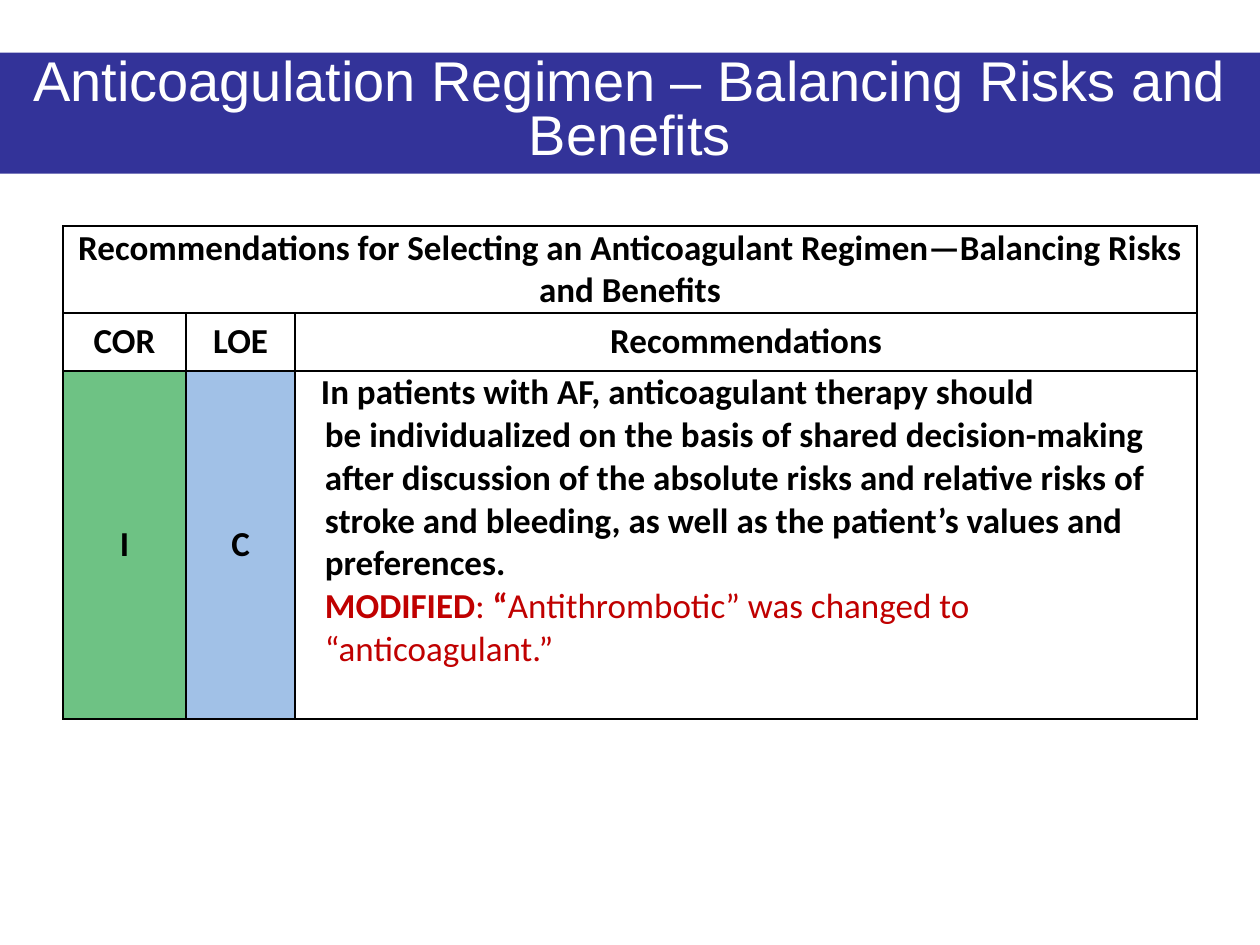
from dataclasses import dataclass

import pptx
import pptx.dml.color
import pptx.enum.text
import pptx.oxml
import pptx.oxml.ns
import pptx.util
from pptx.util import Cm

RGB = pptx.dml.color.RGBColor.from_string
ALIGN = pptx.enum.text.PP_ALIGN
ANCHOR = pptx.enum.text.MSO_ANCHOR
NO_BREAK_SPACE = chr(160)


@dataclass(frozen=True)
class Theme:
    band: str = "333399"
    title: str = "FFFFFF"
    ink: str = "000000"
    change: str = "C00000"
    paper: str = "FFFFFF"
    cor: str = "6EC284"
    loe: str = "A1C1E7"
    title_font: str = "Arial"
    table_font: str = "Calibri"
    title_pt: float = 32
    table_pt: float = 20
    border_pt: float = 1


@dataclass(frozen=True)
class Run:
    text: str
    bold: bool = True
    color: str = Theme.ink


@dataclass(frozen=True)
class Paragraph:
    runs: tuple[Run, ...]
    align: ALIGN = ALIGN.LEFT
    left: float = 0.55
    indent: float = 0


@dataclass(frozen=True)
class Entry:
    row: int
    col: int
    paragraphs: tuple[Paragraph, ...]
    fill: str = Theme.paper
    anchor: ANCHOR = ANCHOR.MIDDLE


THEME = Theme()
COLUMNS = (2.48, 2.2, 18.18)
ROWS = (1.75, 1.17, 7.01)


def label(row: int, col: int, text: str, fill: str = THEME.paper) -> Entry:
    return Entry(row, col, (Paragraph((Run(text),), ALIGN.CENTER, 0),), fill)


ENTRIES = (
    label(0, 0, "Recommendations for Selecting an Anticoagulant Regimen—Balancing Risks and Benefits"),
    label(1, 0, "COR"),
    label(1, 1, "LOE"),
    label(1, 2, "Recommendations"),
    label(2, 0, "I", THEME.cor),
    label(2, 1, "C", THEME.loe),
    Entry(2, 2, (
        Paragraph((Run(
            f"In patients with AF, anticoagulant therapy should be{NO_BREAK_SPACE}individualized "
            "on the basis of shared decision-making after discussion of the absolute risks and "
            "relative risks of stroke and bleeding, as well as the patient’s values and "
            "preferences."),), indent=-0.08),
        Paragraph((
            Run("MODIFIED", True, THEME.change),
            Run(":", False, THEME.change),
            Run(" “", True, THEME.change),
            Run("Antithrombotic” was changed to “anticoagulant.”", False, THEME.change))),
    ), anchor=ANCHOR.TOP),
)


def style_font(font: pptx.text.text.Font, name: str, size: float, color: str, bold: bool) -> None:
    font.name, font.size, font.bold = name, pptx.util.Pt(size), bold
    font.color.rgb = RGB(color)


def add_title(s: pptx.slide.Slide, text: str) -> None:
    sp = s.shapes.title
    sp.left, sp.top, sp.width, sp.height = Cm(0), Cm(1.06), Cm(25.4), Cm(2.44)
    sp.fill.solid()
    sp.fill.fore_color.rgb = RGB(THEME.band)
    tf = sp.text_frame
    tf.text = text
    tf.word_wrap = True
    tf.auto_size = pptx.enum.text.MSO_AUTO_SIZE.NONE
    tf.vertical_anchor = ANCHOR.TOP
    p = tf.paragraphs[0]
    p.alignment, p.line_spacing = ALIGN.CENTER, 0.8
    style_font(p.runs[0].font, THEME.title_font, THEME.title_pt, THEME.title, False)


def set_borders(cell: pptx.table._Cell) -> None:
    """Border all four sides; lines must precede the fill in the cell properties."""
    tc_pr = cell._tc.get_or_add_tcPr()
    for i, side in enumerate(("lnL", "lnR", "lnT", "lnB")):
        tc_pr.insert(i, pptx.oxml.parse_xml(
            f'<a:{side} {pptx.oxml.ns.nsdecls("a")} w="{pptx.util.Pt(THEME.border_pt)}">'
            f'<a:solidFill><a:srgbClr val="{THEME.ink}"/></a:solidFill></a:{side}>'))


def fill_cell(cell: pptx.table._Cell, entry: Entry) -> None:
    cell.fill.solid()
    cell.fill.fore_color.rgb = RGB(entry.fill)
    cell.vertical_anchor = entry.anchor
    tf = cell.text_frame
    for i, paragraph in enumerate(entry.paragraphs):
        p = tf.add_paragraph() if i else tf.paragraphs[0]
        p.alignment = paragraph.align
        p_pr = p._p.get_or_add_pPr()
        p_pr.set("marL", str(Cm(paragraph.left)))
        p_pr.set("indent", str(Cm(paragraph.indent)))
        for run in paragraph.runs:
            r = p.add_run()
            r.text = run.text
            style_font(r.font, THEME.table_font, THEME.table_pt, run.color, run.bold)


def add_recommendations(s: pptx.slide.Slide) -> None:
    table = s.shapes.add_table(len(ROWS), len(COLUMNS), Cm(1.27), Cm(4.56),
                               Cm(sum(COLUMNS)), Cm(sum(ROWS))).table
    for column, width in zip(table.columns, COLUMNS):
        column.width = Cm(width)
    for row, height in zip(table.rows, ROWS):
        row.height = Cm(height)
    table.cell(0, 0).merge(table.cell(0, len(COLUMNS) - 1))
    for cell in table.iter_cells():
        cell.margin_left = cell.margin_right = Cm(0.05)
        cell.margin_top = cell.margin_bottom = Cm(0)
        set_borders(cell)
    for entry in ENTRIES:
        fill_cell(table.cell(entry.row, entry.col), entry)


def main() -> None:
    prs = pptx.Presentation()
    prs.slide_width, prs.slide_height = Cm(25.4), Cm(19.05)
    s = prs.slides.add_slide(prs.slide_layouts[5])
    add_title(s, "Anticoagulation Regimen – Balancing Risks and Benefits")
    add_recommendations(s)
    prs.save("out.pptx")


if __name__ == "__main__":
    main()
